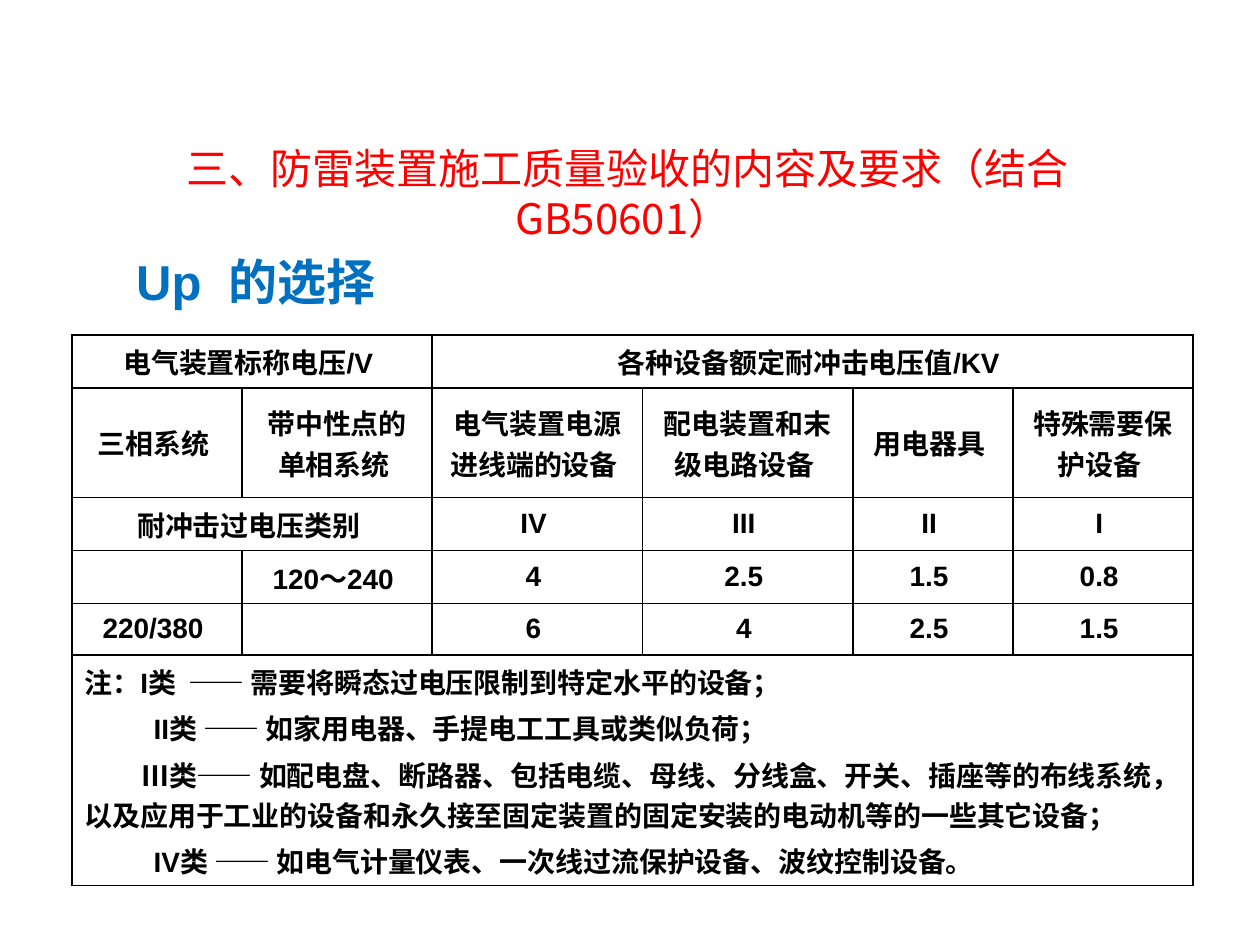
import pptx
import pptx.util
import pptx.dml.color
import pptx.enum.text
import pptx.oxml
import pptx.oxml.ns

Inches = pptx.util.Inches
Pt = pptx.util.Pt
RGBColor = pptx.dml.color.RGBColor
Align = pptx.enum.text.PP_ALIGN
Anchor = pptx.enum.text.MSO_ANCHOR
qn = pptx.oxml.ns.qn

RED = RGBColor(0xFF, 0x00, 0x00)
BLUE = RGBColor(0x00, 0x70, 0xC0)
BLACK = RGBColor(0x00, 0x00, 0x00)
HAN_FONT = "Noto Sans CJK SC"

COLUMNS = [1.35, 1.51, 1.67, 1.67, 1.27, 1.43]
ROWS = [0.42, 0.87, 0.42, 0.42, 0.41, 1.83]
RATINGS = [
    ["电气装置标称电压/V ", None, "各种设备额定耐冲击电压值/KV ", None, None, None],
    ["三相系统 ", "带中性点的单相系统 ", "电气装置电源进线端的设备 ",
     "配电装置和末级电路设备 ", "用电器具 ", "特殊需要保护设备 "],
    ["耐冲击过电压类别 ", None, "IV ", "III ", "II ", "I "],
    [None, "120～240 ", "4 ", "2.5 ", "1.5 ", "0.8 "],
    ["220/380 ", None, "6 ", "4 ", "2.5 ", "1.5 "],
]
SPANS = [(0, 0, 1), (0, 2, 5), (2, 0, 1), (5, 0, 5)]
NOTES = [
    ("注：I类  —— 需要将瞬态过电压限制到特定水平的设备；", 0),
    ("II类 —— 如家用电器、手提电工工具或类似负荷；", 0.55),
    ("Ⅲ类—— 如配电盘、断路器、包括电缆、母线、分线盒、开关、插座等的布线系统，"
     "以及应用于工业的设备和永久接至固定装置的固定安装的电动机等的一些其它设备；", 0.45),
    ("IV类 —— 如电气计量仪表、一次线过流保护设备、波纹控制设备。", 0.55),
]


def write(paragraph, text, size=16, color=BLACK, bold=True, font="Arial",
          align=Align.CENTER, indent=0, before=0):
    paragraph.alignment = align
    if indent:
        paragraph._p.get_or_add_pPr().set("indent", str(Inches(indent)))
    if before:
        paragraph.space_before = Pt(before)
    run = paragraph.add_run()
    run.text = text
    run.font.size = Pt(size)
    run.font.bold = bold
    run.font.name = font
    run.font.color.rgb = color
    han = run._r.get_or_add_rPr().makeelement(qn("a:ea"), {"typeface": HAN_FONT})
    run.font._element.find(qn("a:latin")).addnext(han)


def add_heading(slide, text, left, top, width, height, **style):
    frame = slide.shapes.add_textbox(*map(Inches, (left, top, width, height))).text_frame
    frame.word_wrap = True
    frame.vertical_anchor = Anchor.MIDDLE
    write(frame.paragraphs[0], text, **style)


def rule_cell(cell):
    cell.fill.background()
    cell.vertical_anchor = Anchor.MIDDLE
    properties = cell._tc.get_or_add_tcPr()
    for position, side in enumerate(("lnL", "lnR", "lnT", "lnB")):
        properties.insert(position, pptx.oxml.parse_xml(
            f'<a:{side} xmlns:a="http://schemas.openxmlformats.org/drawingml/2006/main" '
            f'w="{Pt(1)}"><a:solidFill><a:srgbClr val="{BLACK}"/></a:solidFill></a:{side}>'))


def add_notes(frame):
    for number, (note, indent) in enumerate(NOTES):
        paragraph = frame.add_paragraph() if number else frame.paragraphs[0]
        write(paragraph, note, align=Align.LEFT, indent=indent, before=3.4 if number else 0)


def add_ratings_table(slide):
    ratings = slide.shapes.add_table(
        len(ROWS), len(COLUMNS), Inches(0.57), Inches(2.66),
        Inches(sum(COLUMNS)), Inches(sum(ROWS))).table
    ratings.first_row = ratings.horz_banding = False
    for column, width in zip(ratings.columns, COLUMNS):
        column.width = Inches(width)
    for row, height in zip(ratings.rows, ROWS):
        row.height = Inches(height)
        for cell in row.cells:
            rule_cell(cell)
    for row, first, last in SPANS:
        ratings.cell(row, first).merge(ratings.cell(row, last))
    for row, entries in enumerate(RATINGS):
        for column, entry in enumerate(entries):
            if entry:
                write(ratings.cell(row, column).text_frame.paragraphs[0], entry)
    add_notes(ratings.cell(len(RATINGS), 0).text_frame)


def main():
    deck = pptx.Presentation()
    deck.slide_width, deck.slide_height = Inches(10), Inches(7.5)
    slide = deck.slides.add_slide(deck.slide_layouts[6])
    add_heading(slide, "Up  的选择", 0.47, 1.88, 3.12, 0.7, size=28, color=BLUE)
    add_ratings_table(slide)
    add_heading(slide, "三、防雷装置施工质量验收的内容及要求（结合GB50601） ",
                0.55, 1.17, 8.86, 0.72, size=24, color=RED, bold=False, font=HAN_FONT)
    deck.save("out.pptx")


if __name__ == "__main__":
    main()
